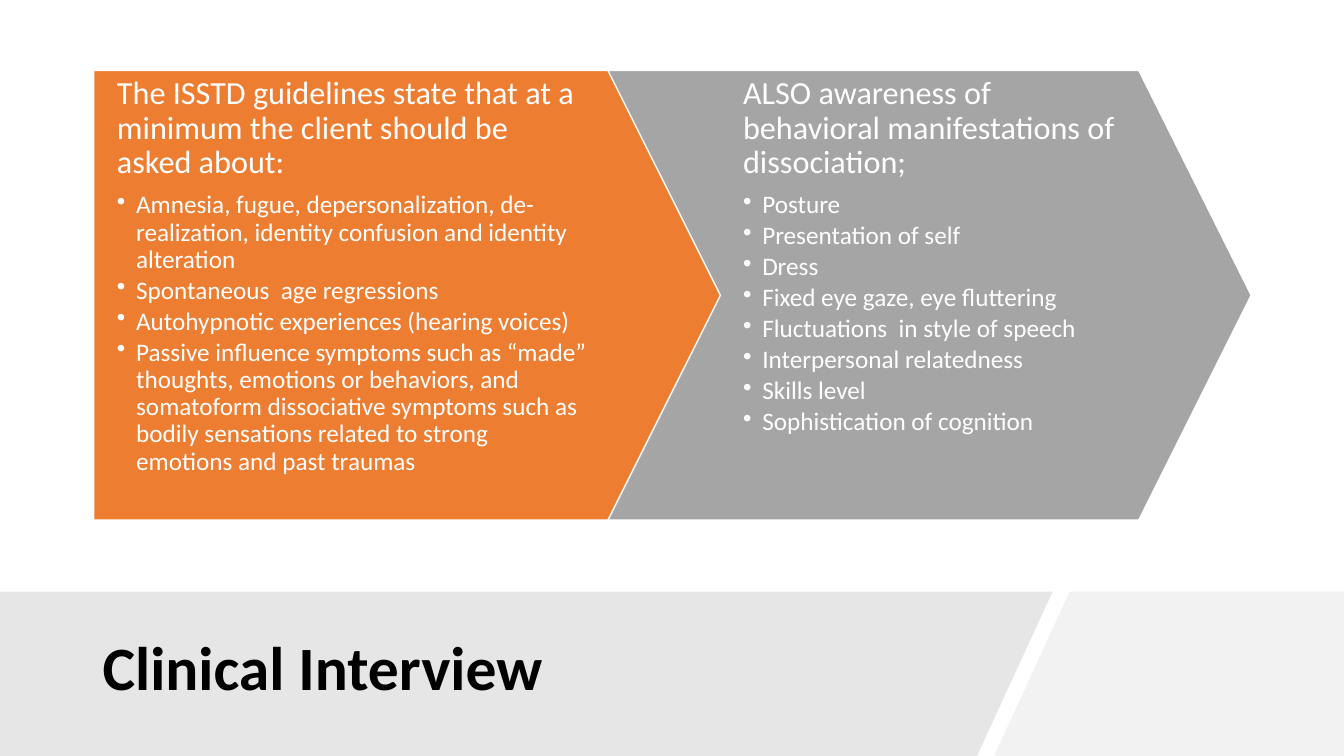
from lxml.etree import SubElement
from pptx import Presentation
from pptx.dml.color import RGBColor
from pptx.enum.shapes import MSO_SHAPE
from pptx.enum.text import MSO_ANCHOR
from pptx.oxml.ns import qn
from pptx.util import Inches, Pt

COLORS = {
    "orange": "ED7D31",
    "gray": "A5A5A5",
    "band": "E7E6E6",
    "corner": "F2F2F2",
    "white": "FFFFFF",
    "black": "000000",
}

prs = Presentation()
prs.slide_width, prs.slide_height = Inches(13.33), Inches(7.5)
slide = prs.slides.add_slide(prs.slide_layouts[6])


def add_paragraph(frame, text, size, color="white", bold=False, after=0, bullet=False):
    """Fill the frame's empty first paragraph, or append a new one."""
    paragraph = frame.paragraphs[0] if not frame.text else frame.add_paragraph()
    paragraph.line_spacing = 0.9
    paragraph.space_after = Pt(after)
    run = paragraph.add_run()
    run.text = text
    run.font.name = "Calibri"
    run.font.size = Pt(size)
    run.font.bold = bold
    run.font.color.rgb = RGBColor.from_string(COLORS[color])
    if bullet:
        paragraph.level = 1
        properties = paragraph._p.get_or_add_pPr()
        properties.set("marL", str(Inches(0.19)))
        properties.set("indent", str(-Inches(0.19)))
        SubElement(properties, qn("a:buChar")).set("char", "•")


def add_text_frame(left, top, width, height, margins):
    frame = slide.shapes.add_textbox(
        Inches(left), Inches(top), Inches(width), Inches(height)).text_frame
    frame.word_wrap = True
    frame.margin_left, frame.margin_top, frame.margin_right, frame.margin_bottom = (
        Inches(margin) for margin in margins)
    return frame


# Footer: slanted corner and title band
footer_parts = [
    ("corner", [(10.61, 5.87), (13.33, 5.87), (13.33, 7.5), (9.86, 7.5)]),
    ("band", [(0, 5.87), (10.44, 5.87), (9.69, 7.5), (0, 7.5)]),
]
for color, corners in footer_parts:
    points = [(Inches(x), Inches(y)) for x, y in corners]
    builder = slide.shapes.build_freeform(*points[0])
    builder.add_line_segments(points[1:], close=True)
    footer_part = builder.convert_to_shape()
    footer_part.shadow.inherit = False
    footer_part.fill.solid()
    footer_part.fill.fore_color.rgb = RGBColor.from_string(COLORS[color])
    footer_part.line.fill.background()

# Title
title = add_text_frame(0.92, 6.05, 8.83, 1.2, (0.1, 0.05, 0.1, 0.05))
title.vertical_anchor = MSO_ANCHOR.MIDDLE
add_paragraph(title, "Clinical Interview", 44, color="black", bold=True)

# Two interlocking arrows: shape, left, colour, text left, text width, right margin, wording
arrows = [
    (MSO_SHAPE.PENTAGON, 0.93, "orange", 0.93, 5.82, 0.9,
     "The ISSTD guidelines state that at a minimum the client should be asked about:",
     ["Amnesia, fugue, depersonalization, de-realization, identity confusion "
      "and identity alteration",
      "Spontaneous  age regressions",
      "Autohypnotic experiences (hearing voices)",
      "Passive influence symptoms such as “made” thoughts, emotions or behaviors, "
      "and somatoform dissociative symptoms such as bodily sensations related to "
      "strong emotions and past traumas"]),
    (MSO_SHAPE.CHEVRON, 6.03, "gray", 7.14, 4.15, 0.23,
     "ALSO awareness of behavioral manifestations of dissociation;",
     ["Posture", "Presentation of self", "Dress", "Fixed eye gaze, eye fluttering",
      "Fluctuations  in style of speech", "Interpersonal relatedness",
      "Skills level", "Sophistication of cognition"]),
]
for preset, left, color, text_left, text_width, right_margin, heading, items in arrows:
    arrow = slide.shapes.add_shape(
        preset, Inches(left), Inches(0.7), Inches(6.38), Inches(4.46))
    arrow.adjustments[0] = 0.25
    arrow.shadow.inherit = False
    arrow.fill.solid()
    arrow.fill.fore_color.rgb = RGBColor.from_string(COLORS[color])
    arrow.line.color.rgb = RGBColor.from_string(COLORS["white"])
    arrow.line.width = Pt(1)

    body = add_text_frame(text_left, 0.7, text_width, 4.46, (0.23, 0.06, right_margin, 0.06))
    add_paragraph(body, heading, 23, after=8)
    for item in items:
        add_paragraph(body, item, 18, after=2.7, bullet=True)

prs.save("out.pptx")
